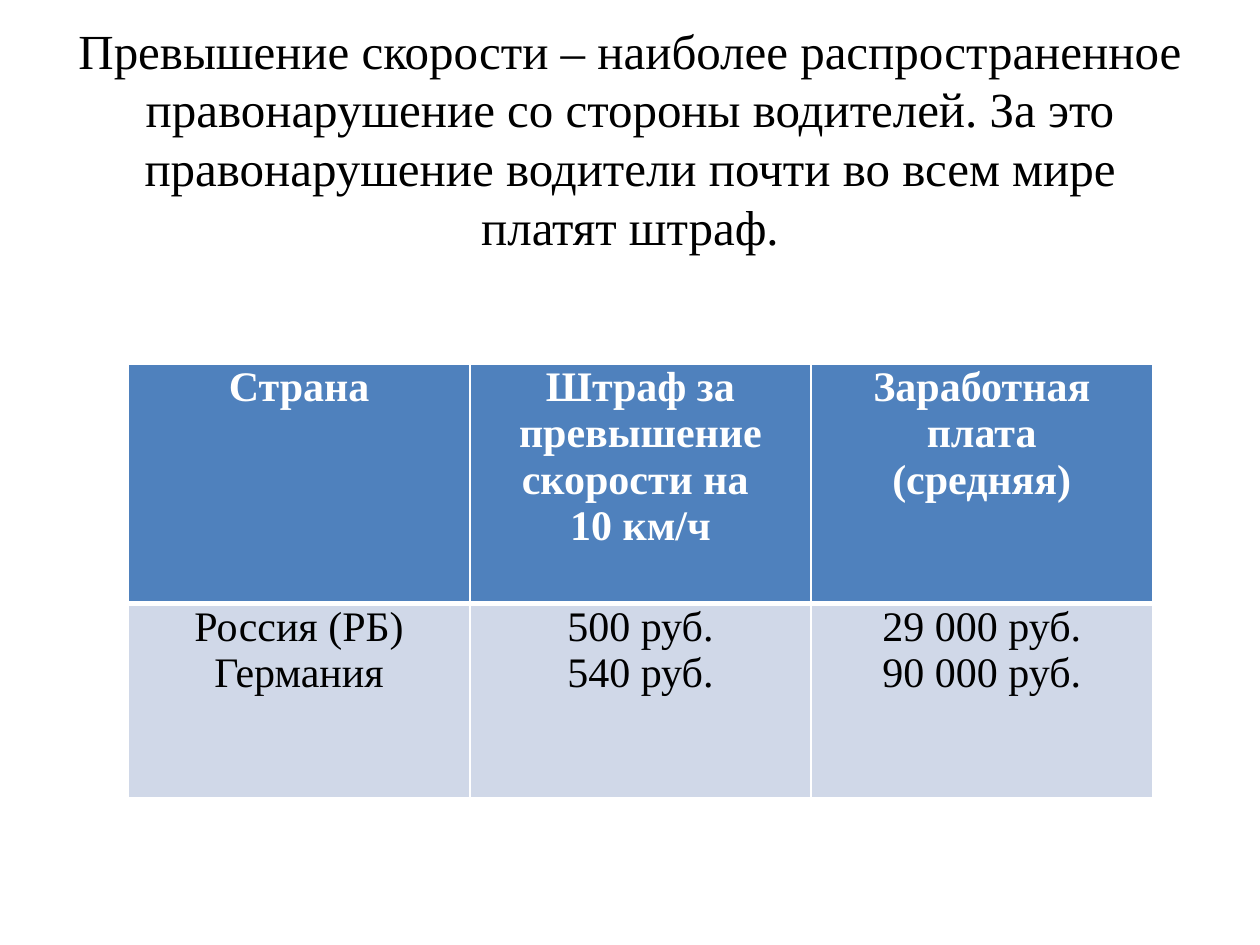
from dataclasses import dataclass

from lxml import etree
from pptx import Presentation
from pptx.dml.color import RGBColor
from pptx.enum.text import MSO_ANCHOR, PP_ALIGN
from pptx.oxml.ns import qn
from pptx.util import Cm, Pt

CENTER = PP_ALIGN.CENTER
MIDDLE = MSO_ANCHOR.MIDDLE

TITLE = (
    "Превышение скорости – наиболее распространенное правонарушение "
    "со стороны водителей. За это правонарушение водители почти "
    "во всем мире платят штраф."
)
ROWS = [
    ["Страна", "Штраф за превышение скорости на \n10 км/ч", "Заработная плата\n(средняя)"],
    ["Россия (РБ)\nГермания", "500 руб.\n540 руб.", "29 000 руб.\n90 000 руб."],
]
ROW_HEIGHTS = [4.83, 3.91]
COLUMN_WIDTH = 6.88


@dataclass(frozen=True)
class Theme:
    font: str = "Times New Roman"
    title_size: int = 28
    cell_size: int = 24
    text: str = "000000"
    header_text: str = "FFFFFF"
    header_fill: str = "4F81BD"
    body_fill: str = "D0D8E8"
    border: str = "FFFFFF"
    border_width: int = 1
    header_rule: int = 3


THEME = Theme()


def format_text(tf, size, color, bold=False):
    for p in tf.paragraphs:
        p.alignment = CENTER
        for r in p.runs:
            r.font.name = THEME.font
            r.font.size = Pt(size)
            r.font.bold = bold
            r.font.color.rgb = RGBColor.from_string(color)


def set_borders(cell, widths):
    tc_pr = cell._tc.get_or_add_tcPr()
    for side, width in widths.items():
        line = etree.SubElement(tc_pr, qn(f"a:ln{side}"), w=str(Pt(width)))
        fill = etree.SubElement(line, qn("a:solidFill"))
        etree.SubElement(fill, qn("a:srgbClr"), val=THEME.border)


def add_title(s):
    sp = s.shapes.add_textbox(Cm(1.27), Cm(1.19), Cm(22.86), Cm(4.37))
    tf = sp.text_frame
    tf.word_wrap = True
    tf.vertical_anchor = MIDDLE
    tf.margin_bottom = Cm(1.32)
    tf.text = TITLE
    format_text(tf, THEME.title_size, THEME.text)


def add_fines_table(s):
    columns = len(ROWS[0])
    table = s.shapes.add_table(
        len(ROWS), columns, Cm(2.59), Cm(7.34),
        Cm(COLUMN_WIDTH * columns), Cm(sum(ROW_HEIGHTS)),
    ).table
    for column in table.columns:
        column.width = Cm(COLUMN_WIDTH)
    for i, (texts, height) in enumerate(zip(ROWS, ROW_HEIGHTS)):
        table.rows[i].height = Cm(height)
        header = i == 0
        widths = dict.fromkeys("LRTB", THEME.border_width)
        widths["B" if header else "T"] = THEME.header_rule
        for j, text in enumerate(texts):
            cell = table.cell(i, j)
            cell.margin_left = cell.margin_right = Cm(0.18)
            cell.margin_top = cell.margin_bottom = 0
            set_borders(cell, widths)
            cell.fill.solid()
            fill = THEME.header_fill if header else THEME.body_fill
            cell.fill.fore_color.rgb = RGBColor.from_string(fill)
            cell.text_frame.text = text
            color = THEME.header_text if header else THEME.text
            format_text(cell.text_frame, THEME.cell_size, color, header)


def main():
    prs = Presentation()
    prs.slide_width, prs.slide_height = Cm(25.4), Cm(19.05)
    s = prs.slides.add_slide(prs.slide_layouts[6])
    add_title(s)
    add_fines_table(s)
    prs.save("out.pptx")


if __name__ == "__main__":
    main()
